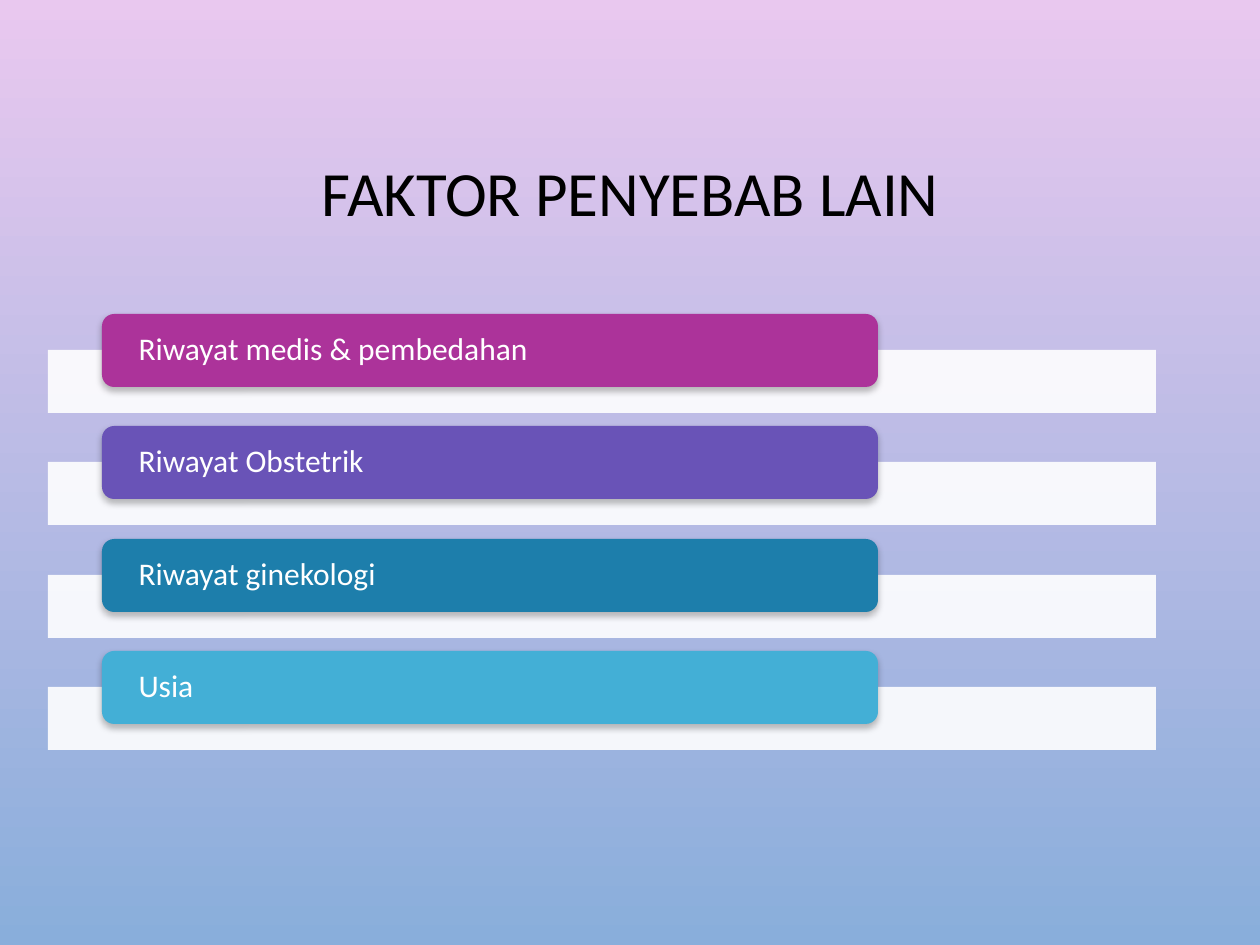
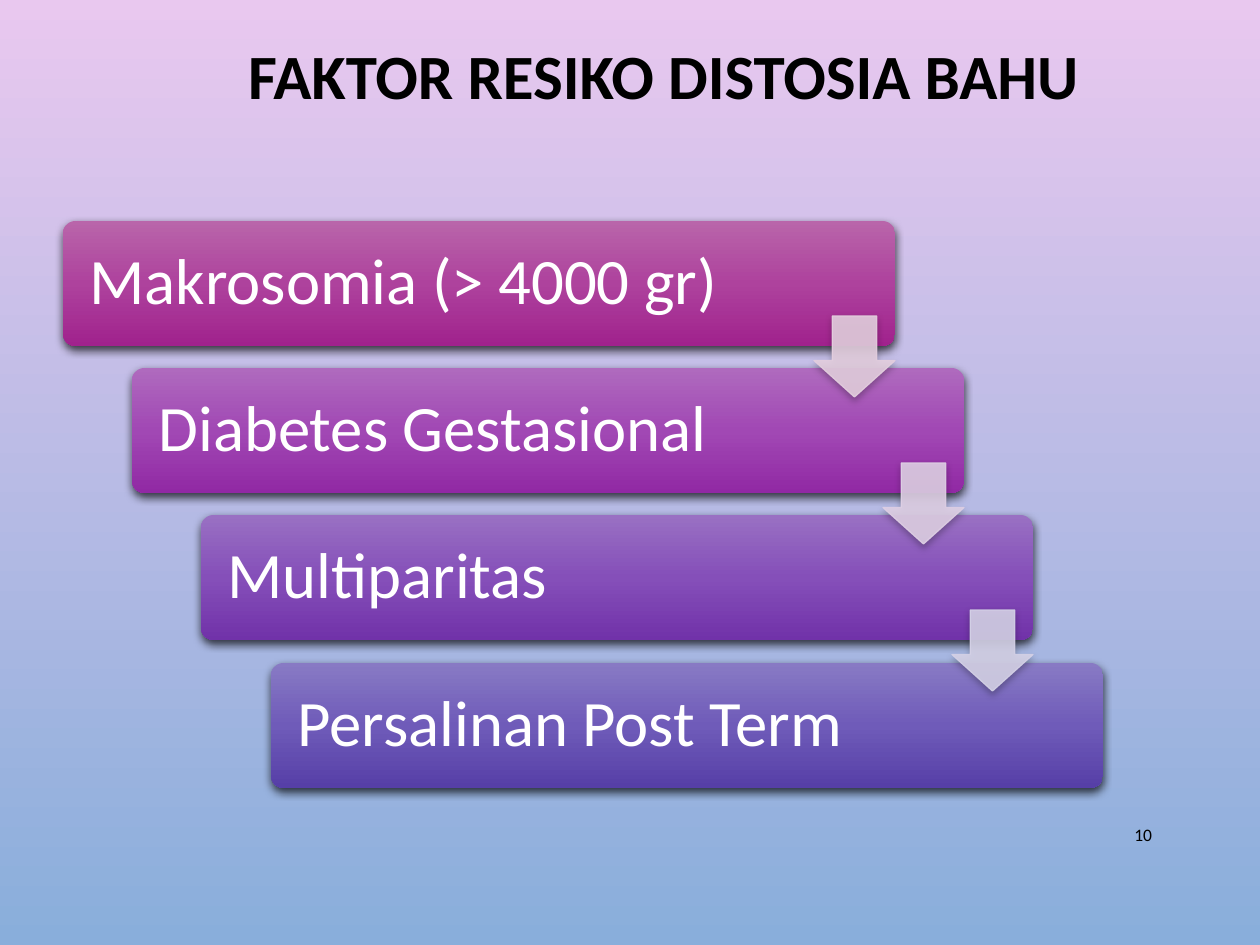
from lxml import etree
from pptx import Presentation
from pptx.dml.color import RGBColor
from pptx.enum.shapes import MSO_SHAPE
from pptx.enum.text import MSO_ANCHOR, PP_ALIGN
from pptx.oxml.ns import qn
from pptx.util import Emu, Pt

RECT, ROUNDED, DOWN_ARROW = MSO_SHAPE.RECTANGLE, MSO_SHAPE.ROUNDED_RECTANGLE, MSO_SHAPE.DOWN_ARROW
LEFT, CENTER, RIGHT = PP_ALIGN.LEFT, PP_ALIGN.CENTER, PP_ALIGN.RIGHT
MIDDLE = MSO_ANCHOR.MIDDLE

PX_PER_INCH = 126
FONT = "Calibri"
COLORS = {"sky_top": "E9C8EF", "sky_bottom": "89AEDB", "ink": "000000", "white": "FFFFFF"}
SOFT_SHADOW = {"alpha": 28, "blur": 4, "distance": 2}
DEEP_SHADOW = {"alpha": 69, "blur": 5, "distance": 2}

# Label and card colour
OTHER_CAUSES = [
    ("Riwayat medis & pembedahan", "AC339A"),
    ("Riwayat Obstetrik", "6953B7"),
    ("Riwayat ginekologi", "1D7EAB"),
    ("Usia", "43AFD6"),
]
# Label, card gradient and colour of the arrow to the next card
RISK_FACTORS = [
    ("Makrosomia (> 4000 gr)", ("B965AA", "AE429D", "A0228D"), "E3CEDE"),
    ("Diabetes Gestasional", ("AF6ABE", "A148B4", "9129A4"), "DECFE4"),
    ("Multiparitas", ("9970C3", "854FB9", "7132A9"), "D4D1E6"),
    ("Persalinan Post Term", ("887AC4", "6F5BB9", "563FA7"), None),
]


def px(length):
    return Emu(round(length * 914400 / PX_PER_INCH))


def add_color(parent, color, alpha=100):
    node = etree.SubElement(parent, qn("a:srgbClr"), val=color)
    if alpha < 100:
        etree.SubElement(node, qn("a:alpha"), val=str(alpha * 1000))


def set_gradient(fill, owner, colors):
    """Fill from top to bottom with evenly spaced colours."""
    fill.gradient()
    fill.gradient_angle = 270
    stops = owner.find(".//" + qn("a:gsLst"))
    for old_stop in list(stops):
        stops.remove(old_stop)
    for i, color in enumerate(colors):
        position = 100000 * i // (len(colors) - 1)
        add_color(etree.SubElement(stops, qn("a:gs"), pos=str(position)), color)


def set_solid(fill, owner, color, alpha=100):
    fill.solid()
    fill.fore_color.rgb = RGBColor.from_string(color)
    if alpha < 100:
        solid = owner.find(qn("a:solidFill"))
        solid.clear()
        add_color(solid, color, alpha)


def write_text(frame, text, size, color=COLORS["ink"], bold=False, align=LEFT,
               inset=(13, 6), line_spacing=0.9):
    frame.word_wrap = True
    frame.vertical_anchor = MIDDLE
    frame.margin_left = frame.margin_right = px(inset[0])
    frame.margin_top = frame.margin_bottom = px(inset[1])
    paragraph = frame.paragraphs[0]
    paragraph.alignment = align
    paragraph.line_spacing = line_spacing
    run = paragraph.add_run()
    run.text = text
    run.font.name, run.font.size, run.font.bold = FONT, Pt(size), bold
    run.font.color.rgb = RGBColor.from_string(color)


class Deck:
    def __init__(self):
        self.presentation = Presentation()
        self.presentation.slide_width = px(1260)
        self.presentation.slide_height = px(945)
        self.slide = None

    def new_slide(self):
        self.slide = self.presentation.slides.add_slide(self.presentation.slide_layouts[6])
        set_gradient(self.slide.background.fill, self.slide.element,
                     (COLORS["sky_top"], COLORS["sky_bottom"]))

    def text(self, box, text, **style):
        frame = self.slide.shapes.add_textbox(*map(px, box)).text_frame
        write_text(frame, text, **style)

    def title(self, box, text, **style):
        self.text(box, text, size=36, **style)

    def shape(self, kind, box, fill, alpha=100, outlined=False, shadow=None, adjust=()):
        shape = self.slide.shapes.add_shape(kind, *map(px, box))
        for i, value in enumerate(adjust):
            shape.adjustments[i] = value
        properties = shape.element.spPr
        if isinstance(fill, tuple):
            set_gradient(shape.fill, properties, fill)
        else:
            set_solid(shape.fill, properties, fill, alpha)
        if outlined:
            shape.line.width = Pt(0.75)
            set_solid(shape.line.fill, properties.find(qn("a:ln")), fill, alpha)
        else:
            shape.line.fill.background()
        shape.shadow.inherit = False
        if shadow:
            effects = properties.find(qn("a:effectLst"))
            outer = etree.SubElement(
                effects, qn("a:outerShdw"), blurRad=str(Pt(shadow["blur"])),
                dist=str(Pt(shadow["distance"])), dir="5400000", rotWithShape="0")
            add_color(outer, COLORS["ink"], shadow["alpha"])
        return shape

    def card(self, box, text, fill, size, inset, shadow, adjust=()):
        card = self.shape(ROUNDED, box, fill, shadow=shadow, adjust=adjust)
        write_text(card.text_frame, text, size=size, color=COLORS["white"], inset=inset)

    def arrow(self, box, color):
        self.shape(DOWN_ARROW, box, color, alpha=90, outlined=True,
                   shadow=SOFT_SHADOW, adjust=(0.55, 0.45))


def build_other_causes(deck):
    deck.new_slide()
    deck.title((95, 86, 1071, 221), "FAKTOR PENYEBAB LAIN", align=CENTER)
    for i, (cause, color) in enumerate(OTHER_CAUSES):
        drop = 225 * i // 2
        deck.shape(RECT, (48, 350 + drop, 1108, 63), COLORS["white"], alpha=90)
        deck.card((102, 314 + drop, 776, 73), cause, color, size=18,
                  inset=(33, 0), shadow=SOFT_SHADOW)


def build_risk_factors(deck):
    deck.new_slide()
    deck.title((63, 0, 1029, 158), "FAKTOR RESIKO DISTOSIA BAHU", bold=True, align=RIGHT)

    # Staircase of cards, then the arrows on top of them
    steps = [(63 + 208 * i // 3, 221 + 442 * i // 3) for i in range(len(RISK_FACTORS))]
    for (left, top), (factor, gradient, _) in zip(steps, RISK_FACTORS):
        deck.card((left, top, 832, 125), factor, gradient, size=37,
                  inset=(23, 23), shadow=DEEP_SHADOW, adjust=(0.1,))
    for (left, top), (_, _, arrow_color) in zip(steps, RISK_FACTORS):
        if arrow_color:
            deck.arrow((left + 751, top + 95, 81, 81), arrow_color)

    # Slide number
    deck.text((1086, 810, 79, 50), "10", size=10, align=RIGHT, line_spacing=1.0)


def main():
    deck = Deck()
    build_other_causes(deck)
    build_risk_factors(deck)
    deck.presentation.save("out.pptx")


if __name__ == "__main__":
    main()
